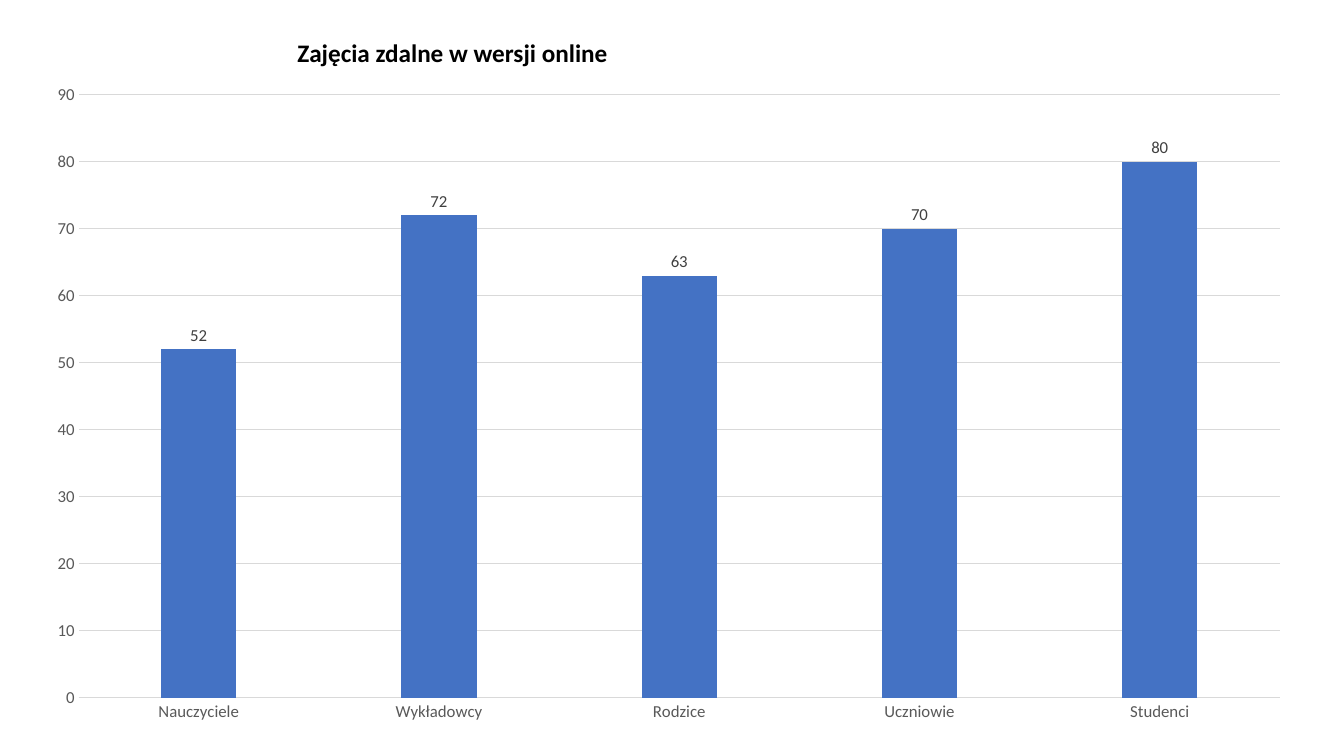
from pptx import Presentation
from pptx.chart.data import CategoryChartData
from pptx.dml.color import RGBColor
from pptx.enum.chart import XL_CHART_TYPE as ChartType
from pptx.enum.chart import XL_LABEL_POSITION as LabelPosition
from pptx.enum.chart import XL_TICK_MARK as TickMark
from pptx.enum.text import MSO_ANCHOR as Anchor
from pptx.enum.text import MSO_AUTO_SIZE as AutoSize
from pptx.enum.text import PP_ALIGN as Align
from pptx.util import Pt

FONT = "Calibri"
COLORS = {
    "title": "000000",
    "bar": "4472C4",
    "axis_text": "595959",
    "value_text": "404040",
    "rule": "D9D9D9",
}
RESULTS = {
    "Nauczyciele": 52,
    "Wykładowcy": 72,
    "Rodzice": 63,
    "Uczniowie": 70,
    "Studenci": 80,
}


def rgb(name):
    return RGBColor.from_string(COLORS[name])


def style_font(font, size, color, bold=False):
    font.name = FONT
    font.size = Pt(size)
    font.bold = bold
    font.color.rgb = rgb(color)


def style_rule(line):
    line.color.rgb = rgb("rule")
    line.width = Pt(0.75)


def style_axis(axis):
    axis.major_tick_mark = axis.minor_tick_mark = TickMark.NONE
    style_font(axis.tick_labels.font, 12, "axis_text")


def add_heading(slide, wording):
    heading = slide.shapes.title
    heading.left, heading.top = Pt(205.2), Pt(23)
    heading.width, heading.height = Pt(589), Pt(30.2)
    frame = heading.text_frame
    frame.word_wrap = True
    frame.auto_size = AutoSize.SHAPE_TO_FIT_TEXT
    frame.vertical_anchor = Anchor.TOP
    paragraph = frame.paragraphs[0]
    paragraph.alignment = Align.LEFT
    paragraph.line_spacing = 1.0
    paragraph.space_before = Pt(0)
    run = paragraph.add_run()
    run.text = wording
    style_font(run.font, 18, "title", bold=True)


def add_results_chart(slide):
    data = CategoryChartData()
    data.categories = list(RESULTS)
    data.add_series("Series 1", list(RESULTS.values()))
    chart = slide.shapes.add_chart(
        ChartType.COLUMN_CLUSTERED, Pt(23), Pt(51.1), Pt(909.4), Pt(473.8), data
    ).chart
    chart.has_title = False
    chart.has_legend = False
    style_font(chart.font, 10, "title")

    # Axes and gridlines
    groups, scale = chart.category_axis, chart.value_axis
    style_axis(groups)
    style_rule(groups.format.line)
    style_axis(scale)
    scale.format.line.fill.background()
    scale.minimum_scale, scale.maximum_scale = 0, 90
    scale.major_unit = 10
    scale.has_major_gridlines = True
    style_rule(scale.major_gridlines.format.line)

    # Bars
    plot = chart.plots[0]
    plot.vary_by_categories = False
    plot.gap_width, plot.overlap = 219, -27
    bars = plot.series[0]
    bars.invert_if_negative = False
    bars.format.fill.solid()
    bars.format.fill.fore_color.rgb = rgb("bar")
    bars.format.line.fill.background()

    # Values above the bars
    values = bars.data_labels
    values.show_value = True
    values.position = LabelPosition.OUTSIDE_END
    style_font(values.font, 12, "value_text")


def main():
    deck = Presentation()
    deck.slide_width, deck.slide_height = Pt(960), Pt(540)
    slide = deck.slides.add_slide(deck.slide_layouts[5])
    add_results_chart(slide)
    add_heading(slide, "Zajęcia zdalne w wersji online")
    deck.save("out.pptx")


if __name__ == "__main__":
    main()
